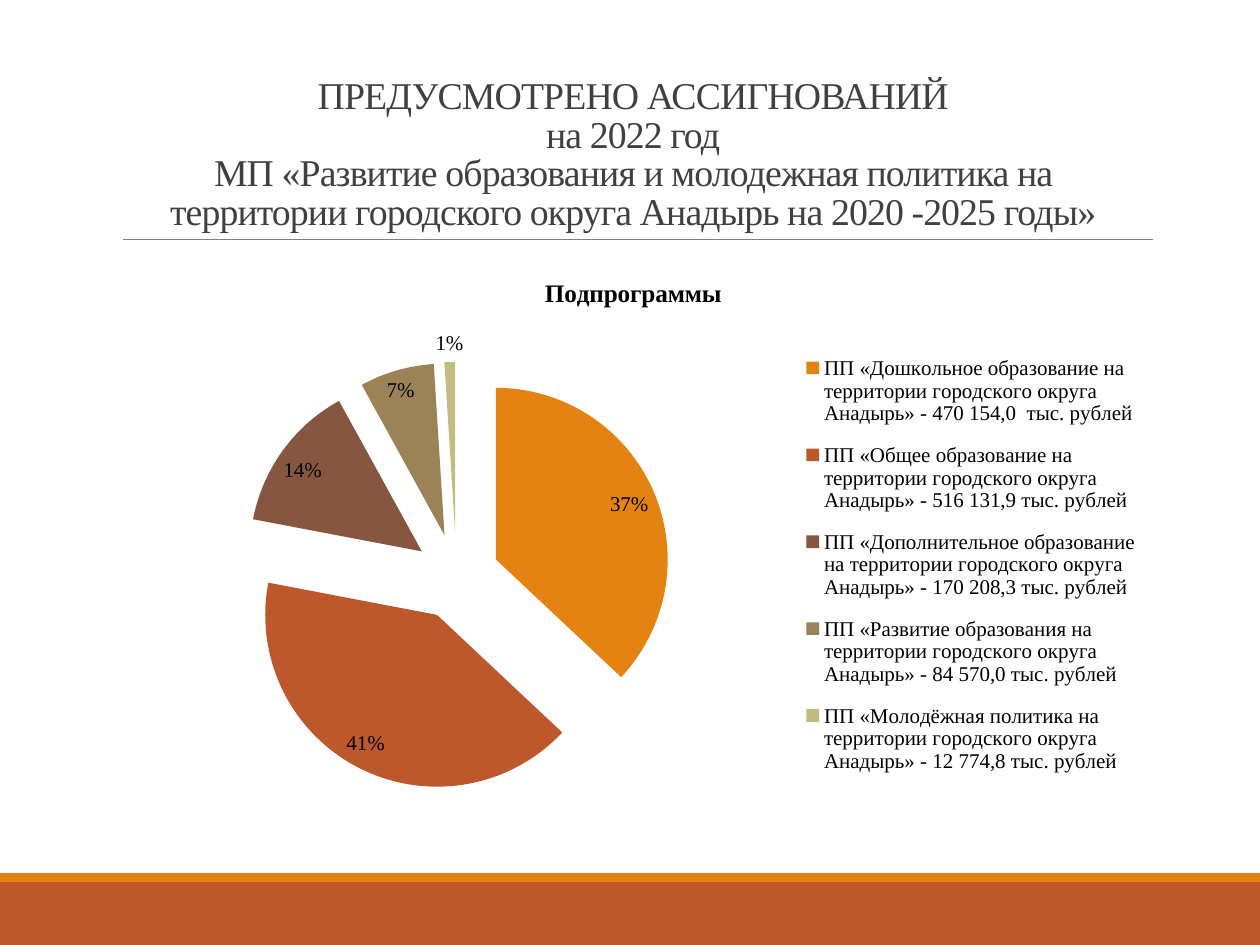
from dataclasses import dataclass

from lxml.etree import SubElement
from pptx import Presentation
from pptx.chart.data import CategoryChartData
from pptx.dml.color import RGBColor as Color
from pptx.enum.chart import XL_CHART_TYPE as ChartType
from pptx.enum.chart import XL_LABEL_POSITION as LabelPosition
from pptx.enum.chart import XL_LEGEND_POSITION as LegendPosition
from pptx.enum.shapes import MSO_CONNECTOR as Connector
from pptx.enum.shapes import MSO_SHAPE as Shape
from pptx.enum.text import MSO_ANCHOR as Anchor
from pptx.enum.text import PP_ALIGN as Align
from pptx.oxml import parse_xml
from pptx.oxml.ns import nsdecls, qn
from pptx.util import Pt


@dataclass(frozen=True)
class Theme:
    font: str = "Times New Roman"
    title_color: str = "404040"
    text_color: str = "000000"
    rule_color: str = "808080"
    slice_colors: tuple = ("E48312", "BD582C", "865640", "9B8357", "C2BC80")
    title_size: float = 21.6
    chart_title_size: float = 14.4
    chart_size: float = 12


class SlideBuilder:
    """Draw styled elements on one slide, with lengths in points."""

    def __init__(self, slide, theme):
        self.slide = slide
        self.theme = theme

    def style(self, font, size, color, bold=False):
        font.name = self.theme.font
        font.size = Pt(size)
        font.bold = bold
        font.color.rgb = Color.from_string(color)

    def band(self, top, height, color):
        shape = self.slide.shapes.add_shape(Shape.RECTANGLE, 0, Pt(top), Pt(720), Pt(height))
        shape.shadow.inherit = False
        shape.fill.solid()
        shape.fill.fore_color.rgb = Color.from_string(color)
        shape.line.fill.background()

    def rule(self, left, right, top):
        line = self.slide.shapes.add_connector(Connector.STRAIGHT, Pt(left), Pt(top), Pt(right), Pt(top))
        line.line.color.rgb = Color.from_string(self.theme.rule_color)
        line.line.width = Pt(0.5)
        SubElement(line._element.spPr, qn("a:effectLst"))

    def title(self, box, lines):
        frame = self.slide.shapes.add_textbox(*map(Pt, box)).text_frame
        frame.word_wrap = True
        frame.vertical_anchor = Anchor.BOTTOM
        paragraph = frame.paragraphs[0]
        paragraph.alignment = Align.CENTER
        paragraph.line_spacing = 0.85
        for index, line in enumerate(lines):
            if index:
                paragraph.add_line_break()
            run = paragraph.add_run()
            run.text = line
            self.style(run.font, self.theme.title_size, self.theme.title_color)
            run._r.get_or_add_rPr().set("spc", "-50")

    def legend(self, chart, left, top, width, height):
        chart.has_legend = True
        legend = chart.legend
        legend.position = LegendPosition.RIGHT
        legend.include_in_layout = False
        self.style(legend.font, self.theme.chart_size, self.theme.text_color)
        layout = parse_xml(
            f'<c:layout {nsdecls("c")}><c:manualLayout>'
            '<c:xMode val="edge"/><c:yMode val="edge"/>'
            f'<c:x val="{left}"/><c:y val="{top}"/><c:w val="{width}"/><c:h val="{height}"/>'
            '</c:manualLayout></c:layout>'
        )
        element = legend._element
        for existing in element.findall(qn("c:layout")):
            element.remove(existing)
        element.find(qn("c:legendPos")).addnext(layout)

    def pie(self, box, name, shares, explosion):
        theme = self.theme
        data = CategoryChartData()
        data.categories = list(shares)
        data.add_series(name, list(shares.values()))
        chart = self.slide.shapes.add_chart(ChartType.PIE, *map(Pt, box), data).chart
        self.style(chart.font, theme.chart_size, theme.text_color)

        chart.has_title = True
        run = chart.chart_title.text_frame.paragraphs[0].add_run()
        run.text = name
        self.style(run.font, theme.chart_title_size, theme.text_color, bold=True)

        plot = chart.plots[0]
        plot.vary_by_categories = True
        series = plot.series[0]
        for index, color in enumerate(theme.slice_colors):
            fill = series.points[index].format.fill
            fill.solid()
            fill.fore_color.rgb = Color.from_string(color)
        first_point = series._element.find(qn("c:dPt"))
        first_point.addprevious(parse_xml(f'<c:explosion {nsdecls("c")} val="{explosion}"/>'))

        plot.has_data_labels = True
        labels = plot.data_labels
        labels.show_value = False
        labels.show_percentage = True
        labels.number_format = "0%"
        labels.number_format_is_linked = False
        labels.position = LabelPosition.BEST_FIT
        self.style(labels.font, theme.chart_size, theme.text_color)
        return chart


def main():
    presentation = Presentation()
    presentation.slide_width, presentation.slide_height = Pt(720), Pt(540)
    theme = Theme()
    builder = SlideBuilder(presentation.slides.add_slide(presentation.slide_layouts[6]), theme)

    builder.band(504, 36, theme.slice_colors[1])
    builder.band(499, 5, theme.slice_colors[0])
    builder.rule(70.5, 659, 136.8)
    builder.title((64.8, 22.3, 594, 114.5), (
        "ПРЕДУСМОТРЕНО АССИГНОВАНИЙ",
        "на 2022 год",
        "МП «Развитие образования и молодежная политика на территории городского округа Анадырь на 2020 -2025 годы»",
    ))
    place = "на территории городского округа Анадырь»"
    chart = builder.pie((64.8, 145.4, 594, 316.8), "Подпрограммы", {
        f"ПП «Дошкольное образование {place} - 470 154,0  тыс. рублей": 37,
        f"ПП «Общее образование {place} - 516 131,9 тыс. рублей": 41,
        f"ПП «Дополнительное образование {place} - 170 208,3 тыс. рублей": 14,
        f"ПП «Развитие образования {place} - 84 570,0 тыс. рублей": 7,
        f"ПП «Молодёжная политика {place} - 12 774,8 тыс. рублей": 1,
    }, explosion=25)
    builder.legend(chart, left=0.66, top=0.15, width=0.33, height=0.82)

    presentation.save("out.pptx")


if __name__ == "__main__":
    main()
